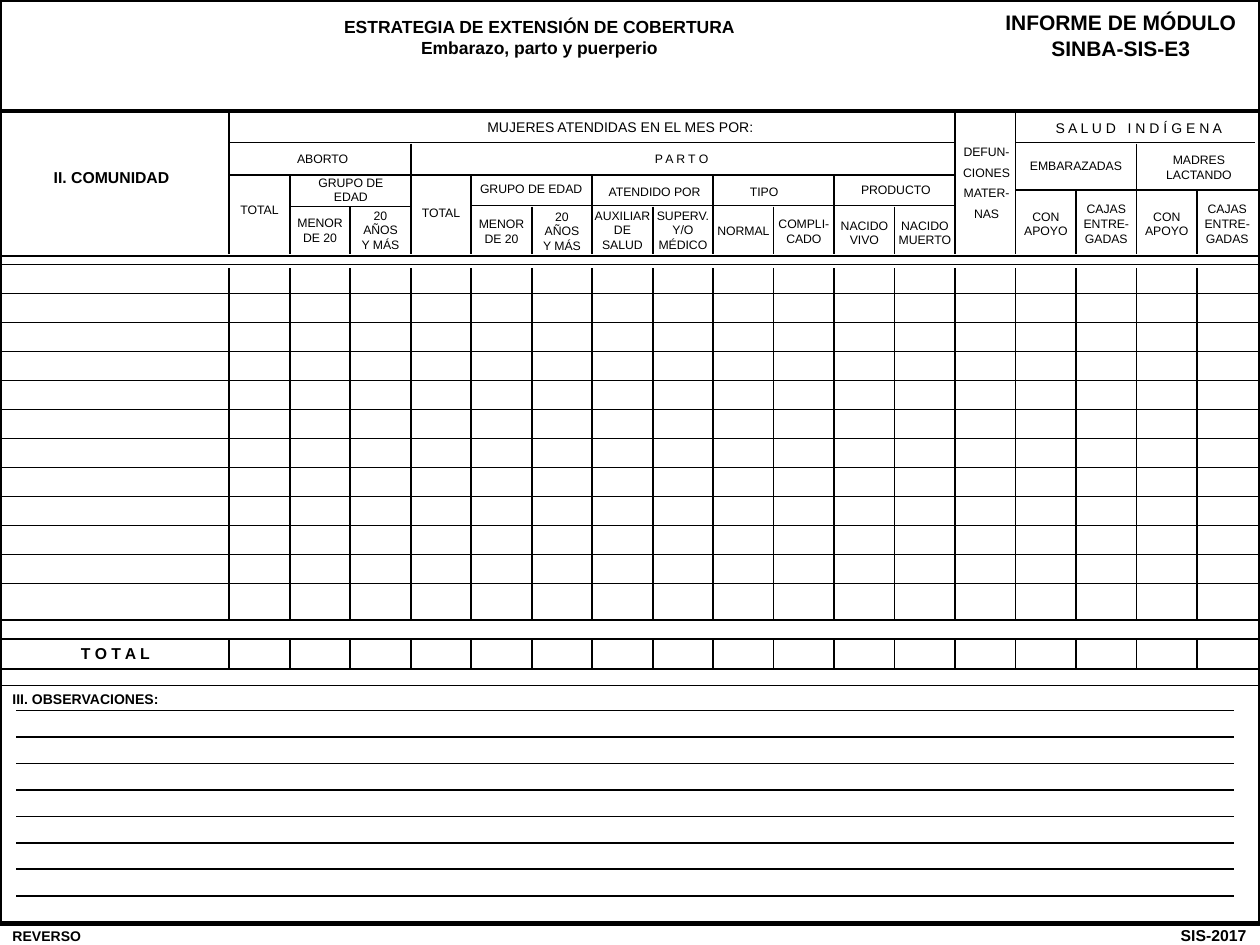
from pptx import Presentation
from pptx.dml.color import RGBColor
from pptx.enum.shapes import MSO_CONNECTOR, MSO_SHAPE
from pptx.enum.text import MSO_ANCHOR, MSO_AUTO_SIZE, PP_ALIGN
from pptx.oxml.ns import qn
from pptx.util import Inches, Pt
from lxml import etree

LEFT, MID, RIGHT = PP_ALIGN.LEFT, PP_ALIGN.CENTER, PP_ALIGN.RIGHT
TOP = MSO_ANCHOR.TOP
GROW = MSO_AUTO_SIZE.SHAPE_TO_FIT_TEXT
RECT = MSO_SHAPE.RECTANGLE
LINE = MSO_CONNECTOR.STRAIGHT
BLACK = "000000"
FONT = "Arial"

# Column rules: x of the first one and the gap between them
COL, STEP = 1.82, 0.48
# Top of each column rule in the header
TOPS = [0.89, 1.39, 1.64, 1.14, 1.39, 1.64, 1.39, 1.64, 1.39,
        1.64, 1.39, 1.64, 0.89, 0.89, 1.52, 1.14, 1.52]

# Header rules: left, right, y
RULES = [(1.82, 7.58, 1.13), (1.82, 7.58, 1.39), (2.3, 3.26, 1.64),
         (3.74, 7.58, 1.63), (8.06, 9.96, 1.13), (8.06, 10, 1.51)]

# Group headings: text, left, top, width, size
GROUPS = [
    ("MUJERES ATENDIDAS EN EL MES POR:", 1.85, 0.89, 6.15, 8),
    ("S A L U D   I N D Í G E N A", 8.07, 0.9, 1.94, 8),
    ("ABORTO", 1.87, 1.15, 1.38, 7),
    ("P A R T O", 3.26, 1.15, 4.3, 7),
    ("GRUPO DE EDAD", 2.35, 1.34, 0.87, 7),
    ("GRUPO DE EDAD", 3.69, 1.39, 1.05, 7),
    ("ATENDIDO POR", 4.69, 1.41, 1.01, 7),
    ("TIPO", 5.61, 1.41, 0.91, 7),
    ("PRODUCTO", 6.71, 1.4, 0.8, 7),
    ("EMBARAZADAS", 8.07, 1.21, 0.94, 7),
    ("MADRES LACTANDO", 9.13, 1.16, 0.77, 7),
]

# Column headings, centred on their column: column, text, top, width
HEADS = [
    (0, "TOTAL", 1.56, 0.56),
    (1, "MENOR DE 20", 1.66, 0.6),
    (2, "20 AÑOS Y MÁS", 1.6, 0.54),
    (3, "TOTAL", 1.58, 0.55),
    (4, "MENOR DE 20", 1.67, 0.6),
    (5, "20 AÑOS Y MÁS", 1.61, 0.54),
    (6, "AUXILIAR DE SALUD", 1.6, 0.67),
    (7, "SUPERV. Y/O MÉDICO", 1.6, 0.63),
    (8, "NORMAL", 1.72, 0.65),
    (9, "COMPLI-CADO", 1.67, 0.74),
    (10, "NACIDO VIVO", 1.68, 0.59),
    (11, "NACIDO MUERTO", 1.68, 0.65),
    (13, "CON APOYO", 1.61, 0.59),
    (14, "CAJAS ENTRE-GADAS", 1.55, 0.72),
    (15, "CON APOYO", 1.61, 0.59),
    (16, "CAJAS ENTRE-GADAS", 1.55, 0.72),
]


def color(code):
    return RGBColor.from_string(code)


def add_text(slide, text, x, y, w, h=0.22, size=7, bold=False, align=MID,
             gap=None, box=None):
    """Write text, one paragraph per line, in a new box or the given one."""
    if box is None:
        box = slide.shapes.add_textbox(0, 0, 0, 0)
    box.left, box.top = Inches(x), Inches(y)
    box.width, box.height = Inches(w), Inches(h)
    frame = box.text_frame
    frame.word_wrap = True
    frame.auto_size = GROW
    frame.vertical_anchor = TOP
    for i, line in enumerate(text.split("\n")):
        para = frame.add_paragraph() if i else frame.paragraphs[0]
        para.alignment = align
        if gap:
            para.line_spacing = gap
        run = para.add_run()
        run.text = line
        font = run.font
        font.name, font.size, font.bold = FONT, Pt(size), bold
        font.color.rgb = color(BLACK)


def add_line(slide, x1, y1, x2, y2, width=1):
    line = slide.shapes.add_connector(
        LINE, Inches(x1), Inches(y1), Inches(x2), Inches(y2))
    line.line.color.rgb = color(BLACK)
    line.line.width = Pt(width)
    props = line._element.find(qn("p:spPr"))
    etree.SubElement(props, qn("a:effectLst"))


def add_frame(slide):
    frame = slide.shapes.add_shape(RECT, 0, 0, Inches(10), Inches(7.33))
    frame.shadow.inherit = False
    frame.fill.background()
    frame.line.color.rgb = color(BLACK)
    frame.line.width = Pt(2.5)


def add_grid(slide):
    # Full-width rules: header, twelve rows, total and notes
    add_line(slide, 0, 0.88, 10, 0.88, 2)
    rows = [2.1 + 0.23 * i for i in range(12)]
    for y in [2.03, *rows, 4.92, 5.07, 5.31, 5.44]:
        add_line(slide, 0, y, 10, y)
    for left, right, y in RULES:
        add_line(slide, left, y, right, y)
    # Column rules through header, body and total
    for i, top in enumerate(TOPS):
        x = COL + STEP * i
        for y1, y2 in [(top, 2.02), (2.13, 4.92), (5.07, 5.31)]:
            add_line(slide, x, y1, x, y2)
    # Writing lines for the notes
    for i in range(9):
        y = 5.64 + 0.21 * i
        add_line(slide, 0.13, y, 9.79, y)


def add_heads(slide):
    for text, x, y, w, size in GROUPS:
        add_text(slide, text, x, y, w, size=size)
    for col, text, y, w in HEADS:
        mid = COL + STEP * (col + 0.5)
        add_text(slide, text, mid - w / 2, y, w, h=0.33)
    # Narrow enough that each half of a hyphenated word gets its own line
    add_text(slide, "DEFUN-CIONES MATER-NAS", 7.48, 1.05, 0.7, 0.75, gap=1.4)


def main():
    deck = Presentation()
    deck.slide_width, deck.slide_height = Inches(10), Inches(7.5)
    slide = deck.slides.add_slide(deck.slide_layouts[5])

    # Frame and titles
    add_frame(slide)
    add_text(slide, "ESTRATEGIA DE EXTENSIÓN DE COBERTURA\n"
             "Embarazo, parto y puerperio", 2.25, 0.08, 4.06, 0.43,
             size=10, bold=True, box=slide.shapes.title)
    add_text(slide, "INFORME DE MÓDULO\nSINBA-SIS-E3", 7.72, 0.03, 2.35, 0.5,
             size=12, bold=True)

    # Form
    add_grid(slide)
    add_heads(slide)
    add_text(slide, "II. COMUNIDAD", 0.22, 1.28, 1.33, 0.25, size=9, bold=True)
    add_text(slide, "T O T A L", 0.08, 5.06, 1.67, 0.25, size=9, bold=True)
    add_text(slide, "III. OBSERVACIONES:", 0, 5.43, 2.41, 0.23, size=8,
             bold=True, align=LEFT)

    # Footer
    add_text(slide, "REVERSO", 0, 7.31, 0.88, 0.23, size=8, bold=True,
             align=LEFT)
    add_text(slide, "SIS-2017", 8.98, 7.3, 1.01, 0.25, size=9, bold=True,
             align=RIGHT)
    deck.save("out.pptx")


if __name__ == "__main__":
    main()
